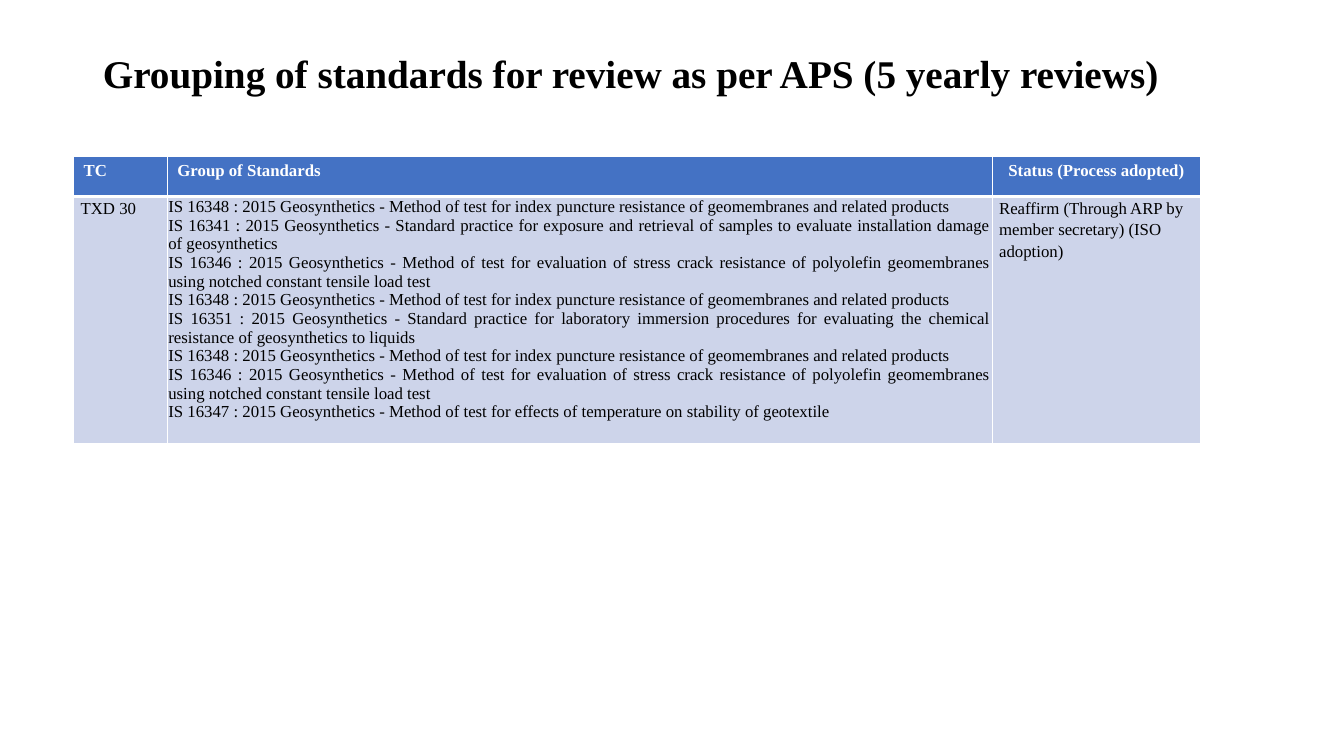
from pptx import Presentation
from pptx.dml.color import RGBColor
from pptx.enum.text import MSO_ANCHOR, MSO_AUTO_SIZE, PP_ALIGN
from pptx.oxml import parse_xml
from pptx.oxml.ns import nsdecls
from pptx.util import Inches, Pt


def add_text(para, text, size, color, bold):
    run = para.add_run()
    run.text = text
    font = run.font
    font.name = "Times New Roman"
    font.size = Pt(size)
    font.bold = bold
    font.color.rgb = RGBColor.from_string(color)


def set_edges(cell, widths):
    props = cell._tc.get_or_add_tcPr()
    for i, (side, width) in enumerate(zip("LRTB", widths)):
        props.insert(i, parse_xml(
            f'<a:ln{side} {nsdecls("a")} w="{Pt(width)}"><a:solidFill>'
            f'<a:srgbClr val="FFFFFF"/></a:solidFill></a:ln{side}>'))


prs = Presentation()
prs.slide_width = Inches(13.33)
prs.slide_height = Inches(7.5)
slide = prs.slides.add_slide(prs.slide_layouts[5])

# Title
title = slide.shapes.title
title.left, title.top = Inches(0.92), Inches(0.31)
title.width, title.height = Inches(11.5), Inches(0.89)
frame = title.text_frame
frame.auto_size = MSO_AUTO_SIZE.NONE
frame.vertical_anchor = MSO_ANCHOR.MIDDLE
para = frame.paragraphs[0]
para.alignment = PP_ALIGN.LEFT
para.line_spacing = 0.9
add_text(para, "Grouping of standards for review as per APS (5 yearly reviews)",
         28, "000000", True)

# Wording of the table
puncture = ("IS 16348 : 2015 Geosynthetics - Method of test for index puncture "
            "resistance of geomembranes and related products")
crack = ("IS 16346 : 2015 Geosynthetics - Method of test for evaluation of stress "
         "crack resistance of polyolefin geomembranes using notched constant "
         "tensile load test")
group = [
    puncture,
    "IS 16341 : 2015 Geosynthetics - Standard practice for exposure and retrieval "
    "of samples to evaluate installation damage of geosynthetics",
    crack,
    puncture,
    "IS 16351 : 2015 Geosynthetics - Standard practice for laboratory immersion "
    "procedures for evaluating the chemical resistance of geosynthetics to liquids",
    puncture,
    crack,
    "IS 16347 : 2015 Geosynthetics - Method of test for effects of temperature on "
    "stability of geotextile",
]
status = "Reaffirm (Through ARP by member secretary) (ISO adoption)"

# Each cell: lines, alignment, line spacing, side / top / bottom margins
left, mid, full = PP_ALIGN.LEFT, PP_ALIGN.CENTER, PP_ALIGN.JUSTIFY
wide, slim, tight = (0.1, 0.05, 0.05), (0.07, 0, 0), (0.01, 0.01, 0)
head = [(["TC"], left, 1.0, wide),
        (["Group of Standards"], left, 1.0, wide),
        (["Status (Process adopted)"], mid, 1.0, wide)]
body = [(["TXD 30"], left, 1.15, slim),
        (group, full, 1.0, tight),
        ([status], left, 1.15, slim)]

# Each row: cells, height, fill, text colour, bold, edge widths
rows = [(head, 0.4, "4472C4", "FFFFFF", True, (1, 1, 1, 3)),
        (body, 2.45, "CDD4EA", "000000", False, (1, 1, 3, 1))]

# Table
table = slide.shapes.add_table(2, 3, Inches(0.73), Inches(1.55),
                               Inches(11.18), Inches(2.85)).table
for col, width in zip(table.columns, (0.93, 8.18, 2.07)):
    col.width = Inches(width)
for r, (cells, height, fill, color, bold, edges) in enumerate(rows):
    table.rows[r].height = Inches(height)
    for c, (lines, align, space, (side, top, bottom)) in enumerate(cells):
        cell = table.cell(r, c)
        cell.margin_left = cell.margin_right = Inches(side)
        cell.margin_top, cell.margin_bottom = Inches(top), Inches(bottom)
        cell.fill.solid()
        cell.fill.fore_color.rgb = RGBColor.from_string(fill)
        set_edges(cell, edges)
        frame = cell.text_frame
        for i, line in enumerate(lines):
            para = frame.add_paragraph() if i else frame.paragraphs[0]
            para.alignment = align
            para.line_spacing = space
            add_text(para, line, 12, color, bold)

prs.save("out.pptx")
